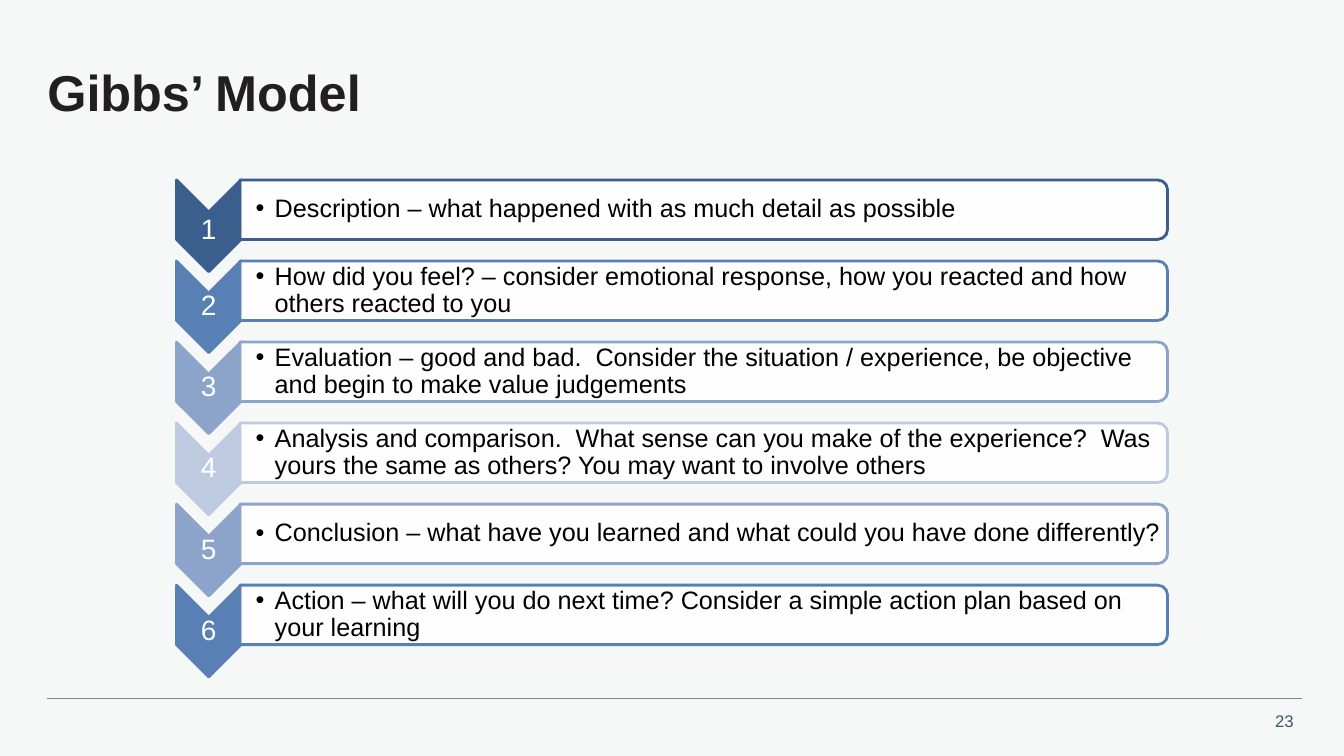
from dataclasses import dataclass

from lxml import etree
from pptx import Presentation, util as u
from pptx.dml.color import RGBColor
from pptx.enum import shapes, text
from pptx.oxml import ns

COLOURS = {
    "background": "F6F8F8", "title": "231F20", "rule": "768692", "page": "425563",
    "white": "FFFFFF", "black": "000000",
    "navy": "3A5F8C", "blue": "5980B5", "mid": "8CA4C9", "pale": "BECADF",
}
SLIDE_W, SLIDE_H = 13.33, 7.5
MARGIN = 0.47
ROW_H = (5.94 - 1.92) / 5
FIRST_ROW = 2.08
ARROW_X, BAR_X = 2.07, 6.98
ARROW_DROP = 0.16
ARROW_LEN, ARROW_W = 0.91, 0.64
BAR_LEN, BAR_H = 9.2, 0.59
BULLET_INDENT = 0.19


@dataclass(frozen=True)
class Box:
    left: float
    top: float
    width: float
    height: float

    @classmethod
    def centred(cls, x: float, y: float, width: float, height: float) -> "Box":
        return cls(x - width / 2, y - height / 2, width, height)

    def emu(self) -> tuple:
        return tuple(u.Inches(v) for v in (self.left, self.top, self.width, self.height))


@dataclass(frozen=True)
class Style:
    size: float
    colour: str
    bold: bool = False
    align: text.PP_ALIGN = text.PP_ALIGN.LEFT
    spacing: float = 0.9
    insets: tuple = (0.01, 0.01, 0.01, 0.01)
    bullet: bool = False


@dataclass(frozen=True)
class Stage:
    colour: str
    wording: str
    number_shift: float = 0


TITLE = Style(36, "title", bold=True, insets=(0, 0, 0, 0))
PAGE = Style(12, "page", align=text.PP_ALIGN.RIGHT, spacing=1, insets=(0.1, 0.05, 0.1, 0.05))
NUMBER = Style(20, "white", align=text.PP_ALIGN.CENTER)
WORDING = Style(18, "black", insets=(0.14, 0.01, 0.01, 0.01), bullet=True)

STAGES = [
    Stage("navy", "Description – what happened with as much detail as possible", 0.05),
    Stage("blue", "How did you feel? – consider emotional response, how you reacted "
          "and how others reacted to you"),
    Stage("mid", "Evaluation – good and bad.  Consider the situation / experience, "
          "be objective and begin to make value judgements"),
    Stage("pale", "Analysis and comparison.  What sense can you make of the experience?  "
          "Was yours the same as others? You may want to involve others"),
    Stage("mid", "Conclusion – what have you learned and what could you have done differently?"),
    Stage("blue", "Action – what will you do next time? Consider a simple action plan "
          "based on your learning"),
]


def rgb(name: str) -> RGBColor:
    return RGBColor.from_string(COLOURS[name])


def add_label(slide, box: Box, wording: str, style: Style) -> None:
    frame = slide.shapes.add_textbox(*box.emu()).text_frame
    frame.word_wrap = True
    frame.vertical_anchor = text.MSO_ANCHOR.MIDDLE
    (frame.margin_left, frame.margin_top,
     frame.margin_right, frame.margin_bottom) = map(u.Inches, style.insets)
    paragraph = frame.paragraphs[0]
    paragraph.alignment = style.align
    paragraph.line_spacing = style.spacing
    if style.bullet:
        properties = paragraph._p.get_or_add_pPr()
        properties.set("marL", str(u.Inches(BULLET_INDENT)))
        properties.set("indent", str(-u.Inches(BULLET_INDENT)))
        etree.SubElement(properties, ns.qn("a:buFont")).set("typeface", "Arial")
        etree.SubElement(properties, ns.qn("a:buChar")).set("char", "•")
    run = paragraph.add_run()
    run.text = wording
    run.font.name = "Arial"
    run.font.size = u.Pt(style.size)
    run.font.bold = style.bold
    run.font.color.rgb = rgb(style.colour)


def add_turned(slide, kind: shapes.MSO_SHAPE, box: Box, fill: str, outline: str):
    """Add a preset shape turned a quarter clockwise about the centre of its box."""
    turned = slide.shapes.add_shape(kind, *box.emu())
    turned.rotation = 90
    turned.shadow.inherit = False
    turned.fill.solid()
    turned.fill.fore_color.rgb = rgb(fill)
    turned.line.color.rgb = rgb(outline)
    turned.line.width = u.Pt(2)
    return turned


def add_stage(slide, index: int, stage: Stage) -> None:
    row_y = FIRST_ROW + index * ROW_H
    arrow_y = row_y + ARROW_DROP
    add_turned(slide, shapes.MSO_SHAPE.CHEVRON,
               Box.centred(ARROW_X, arrow_y, ARROW_LEN, ARROW_W), stage.colour, stage.colour)
    add_label(slide, Box.centred(ARROW_X, arrow_y + stage.number_shift, ARROW_W, 0.27),
              str(index + 1), NUMBER)
    bar = add_turned(slide, shapes.MSO_SHAPE.ROUND_2_SAME_RECTANGLE,
                     Box.centred(BAR_X, row_y, BAR_H, BAR_LEN), "white", stage.colour)
    white = bar._element.spPr.find(ns.qn("a:solidFill"))[0]
    etree.SubElement(white, ns.qn("a:alpha")).set("val", "90000")
    add_label(slide, Box.centred(BAR_X, row_y, 9.17, 0.53), stage.wording, WORDING)


def add_footer(slide) -> None:
    y = u.Inches(6.93)
    rule = slide.shapes.add_connector(
        shapes.MSO_CONNECTOR.STRAIGHT, u.Inches(MARGIN), y, u.Inches(12.91), y)
    rule.line.color.rgb = rgb("rule")
    rule.line.width = u.Pt(0.5)
    etree.SubElement(rule._element.spPr, ns.qn("a:effectLst"))
    add_label(slide, Box(12.52, 7, 0.41, 0.3), "23", PAGE)


def main() -> None:
    deck = Presentation()
    deck.slide_width, deck.slide_height = u.Inches(SLIDE_W), u.Inches(SLIDE_H)
    slide = deck.slides.add_slide(deck.slide_layouts[6])
    slide.background.fill.solid()
    slide.background.fill.fore_color.rgb = rgb("background")
    add_footer(slide)
    add_label(slide, Box(MARGIN, MARGIN, 12.47, 0.95), "Gibbs’ Model", TITLE)
    for index, stage in enumerate(STAGES):
        add_stage(slide, index, stage)
    deck.save("out.pptx")


if __name__ == "__main__":
    main()
